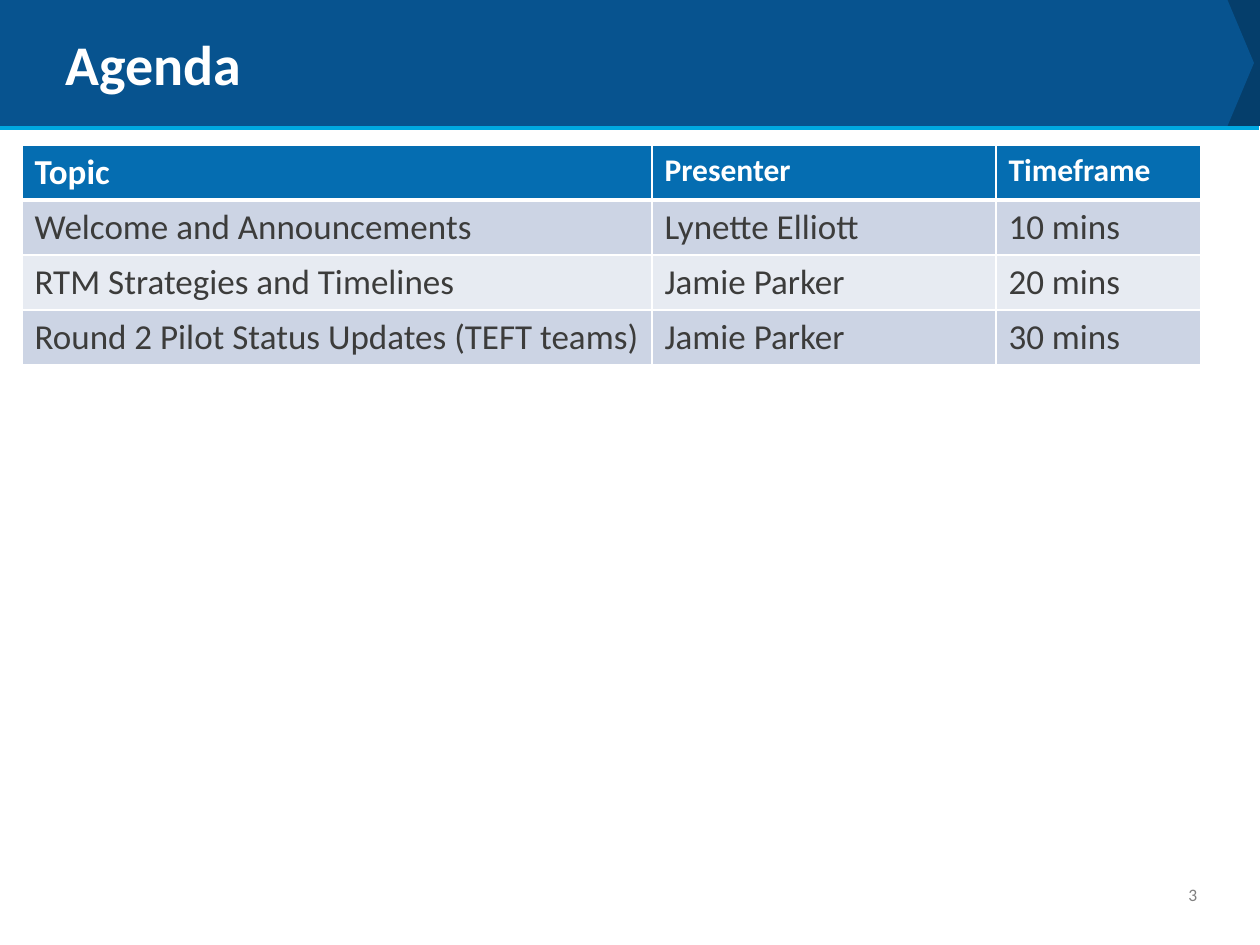
from lxml.etree import SubElement
from pptx import Presentation
from pptx.dml.color import RGBColor as RGB
from pptx.enum.shapes import MSO_CONNECTOR as LINE, MSO_SHAPE as SHAPE
from pptx.enum.text import MSO_ANCHOR as ANCHOR
from pptx.oxml.ns import qn
from pptx.util import Pt

TITLE = "Agenda"
PAGE = "3"
ROWS = [
    ("Topic", "Presenter", "Timeframe"),
    ("Welcome and Announcements", "Lynette Elliott", "10 mins"),
    ("RTM Strategies and Timelines", "Jamie Parker", "20 mins"),
    ("Round 2 Pilot Status Updates (TEFT teams)", "Jamie Parker", "30 mins"),
]
HEAD_SIZES = (20, 18, 18)
COLS = (630, 344, 205)
ROW_H = 55
BANNERS = [("navy", 1203, 57, 0), ("blue", 0, 1254, 0.21)]
COLORS = {
    "navy": "053E6B", "blue": "07538F", "cyan": "00A8E1", "head": "056DB1",
    "odd": "CCD4E4", "even": "E7EBF2", "white": "FFFFFF", "ink": "3C3C3B",
    "gray": "808080",
}
SCALE = 914400 / 126


def px(*vals):
    return [round(v * SCALE) for v in vals]


def color(name):
    return RGB.from_string(COLORS[name])


def style(par, size, tone, bold=False):
    font = par.font
    font.name, font.size, font.bold = "Calibri", Pt(size), bold
    font.color.rgb = color(tone)


def add_text(slide, text, box, size, tone, bold=False, anchor=ANCHOR.TOP):
    frame = slide.shapes.add_textbox(*px(*box)).text_frame
    frame.word_wrap = True
    frame.vertical_anchor = anchor
    frame.text = text
    style(frame.paragraphs[0], size, tone, bold)


def add_banner(slide):
    for tone, left, width, tip in BANNERS:
        shape = slide.shapes.add_shape(SHAPE.PENTAGON, *px(left, 0, width, 126))
        shape.adjustments[0] = tip
        shape.shadow.inherit = False
        shape.fill.solid()
        shape.fill.fore_color.rgb = color(tone)
        shape.line.fill.background()
    rule = slide.shapes.add_connector(LINE.STRAIGHT, *px(0, 128, 1259, 128))
    rule.line.color.rgb = color("cyan")
    rule.line.width = Pt(2.25)
    SubElement(rule._element.spPr, qn("a:effectLst"))


def add_border(cell, head):
    props = cell._tc.get_or_add_tcPr()
    for side in "LRTB":
        width = Pt(3 if head and side == "B" else 1)
        line = SubElement(props, qn(f"a:ln{side}"), w=str(width))
        fill = SubElement(line, qn("a:solidFill"))
        SubElement(fill, qn("a:srgbClr"), val=COLORS["white"])


def add_agenda(slide):
    box = px(22, 145, sum(COLS), ROW_H * len(ROWS))
    table = slide.shapes.add_table(len(ROWS), len(COLS), *box).table
    for col, width in zip(table.columns, px(*COLS)):
        col.width = width
    for r, row in enumerate(ROWS):
        head = r == 0
        band = "head" if head else "odd" if r % 2 else "even"
        for c, text in enumerate(row):
            cell = table.cell(r, c)
            cell.text = text
            add_border(cell, head)
            cell.fill.solid()
            cell.fill.fore_color.rgb = color(band)
            size = HEAD_SIZES[c] if head else 20
            style(cell.text_frame.paragraphs[0], size,
                  "white" if head else "ink", head)


def main():
    deck = Presentation()
    deck.slide_width, deck.slide_height = px(1260, 945)
    slide = deck.slides.add_slide(deck.slide_layouts[6])
    add_banner(slide)
    add_text(slide, PAGE, (1176, 878, 65, 34), 10, "gray")
    add_text(slide, TITLE, (53, 10, 1155, 107), 32, "white", True, ANCHOR.MIDDLE)
    add_agenda(slide)
    deck.save("out.pptx")


if __name__ == "__main__":
    main()
